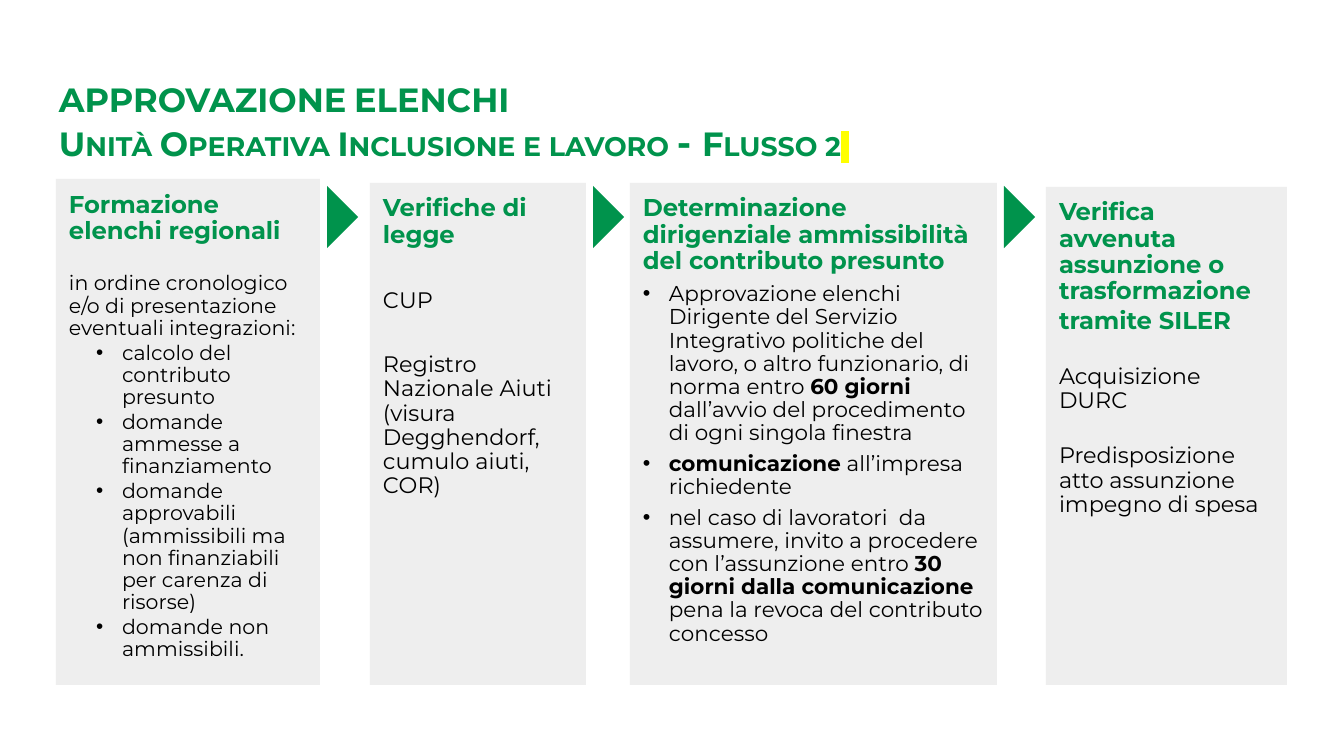
import dataclasses

import lxml.etree
import pptx
import pptx.dml.color
import pptx.enum.shapes
import pptx.enum.text
import pptx.oxml.ns
import pptx.util

EMU_PER_PX = 914400 / 134.4


@dataclasses.dataclass(frozen=True)
class Theme:
    font: str = "Montserrat"
    green: str = "00934C"
    panel: str = "EEEEEE"
    black: str = "000000"
    yellow: str = "FFFF00"
    title_size: float = 18
    dash_size: float = 20
    heading_size: float = 13
    line_spacing: float = 0.9


THEME = Theme()


def px(length):
    return round(length * EMU_PER_PX)


def rgb(value):
    return pptx.dml.color.RGBColor.from_string(value)


def apply(target, values):
    for name, value in values.items():
        setattr(target, name, value)


def sub(parent, tag, **attributes):
    return lxml.etree.SubElement(parent, pptx.oxml.ns.qn(tag), attributes)


def prepare_frame(shape):
    apply(shape.text_frame, {
        "word_wrap": True,
        "auto_size": pptx.enum.text.MSO_AUTO_SIZE.NONE,
        "vertical_anchor": pptx.enum.text.MSO_ANCHOR.TOP,
        "margin_left": px(13), "margin_right": px(13),
        "margin_top": px(13), "margin_bottom": px(13),
    })
    return shape.text_frame


def add_run(paragraph, text, size, color, bold):
    run = paragraph.add_run()
    run.text = text
    apply(run.font, {"name": THEME.font, "size": pptx.util.Pt(size), "bold": bold})
    run.font.color.rgb = rgb(color)
    return run


def add_flat_shape(slide, kind, box, color):
    shape = slide.shapes.add_shape(kind, *map(px, box))
    shape.shadow.inherit = False
    shape.fill.solid()
    shape.fill.fore_color.rgb = rgb(color)
    shape.line.fill.background()
    return shape


def add_title(slide, box):
    frame = prepare_frame(slide.shapes.add_textbox(*map(px, box)))
    title = frame.paragraphs[0]

    def title_run(text, size=THEME.title_size, small_caps=True):
        run = add_run(title, text, size, THEME.green, True)
        if small_caps:
            run.font._element.set("cap", "small")
        return run

    title_run("APPROVAZIONE ELENCHI ")
    title.add_line_break()
    title_run("Unità Operativa Inclusione e lavoro ")
    title_run("- ", THEME.dash_size, False)
    title_run("Flusso 2")
    marked = title_run(" ").font._element
    highlight = lxml.etree.Element(pptx.oxml.ns.qn("a:highlight"))
    sub(highlight, "a:srgbClr", val=THEME.yellow)
    marked.find(pptx.oxml.ns.qn("a:solidFill")).addnext(highlight)


def add_bullet(paragraph, margin):
    properties = paragraph._p.get_or_add_pPr()
    properties.set("marL", str(px(margin)))
    properties.set("indent", str(-px(26)))
    sub(sub(properties, "a:buClr"), "a:srgbClr", val=THEME.black)
    sub(properties, "a:buFont", typeface="Arial")
    sub(properties, "a:buChar", char="•")


def add_step(slide, box, step):
    rectangle = pptx.enum.shapes.MSO_SHAPE.RECTANGLE
    frame = prepare_frame(add_flat_shape(slide, rectangle, box, THEME.panel))
    for index, (kind, gap, runs) in enumerate(step["paragraphs"]):
        paragraph = frame.paragraphs[0] if index == 0 else frame.add_paragraph()
        if kind == "bullet":
            add_bullet(paragraph, step["bullet_margin"])
        apply(paragraph, {
            "alignment": pptx.enum.text.PP_ALIGN.LEFT,
            "line_spacing": THEME.line_spacing,
            "space_before": pptx.util.Pt(gap),
        })
        for text, bold in runs:
            if kind == "heading":
                add_run(paragraph, text, THEME.heading_size, THEME.green, True)
            else:
                add_run(paragraph, text, step["size"], THEME.black, bold)


def add_arrow(slide, box):
    triangle = pptx.enum.shapes.MSO_SHAPE.RIGHT_TRIANGLE
    add_flat_shape(slide, triangle, box, THEME.green).rotation = 225


def plain(kind, gap, text):
    return kind, gap, [(text, False)]


STEPS = [
    {"left": 56, "top": 179, "width": 264, "size": 11, "bullet_margin": 53, "paragraphs": [
        plain("heading", 0, "Formazione elenchi regionali"),
        plain("body", 15.3, "in ordine cronologico e/o di presentazione eventuali integrazioni:"),
        plain("bullet", 1.5, "calcolo del contributo presunto"),
        plain("bullet", 1.5, "domande ammesse a finanziamento"),
        plain("bullet", 1.5, "domande approvabili (ammissibili ma non finanziabili per carenza di risorse)"),
        plain("bullet", 1.5, "domande non ammissibili."),
    ]},
    {"left": 370, "top": 183, "width": 216, "size": 12, "paragraphs": [
        plain("heading", 0, "Verifiche di legge"),
        plain("body", 22, "CUP"),
        plain("body", 21.3, "Registro Nazionale Aiuti (visura Degghendorf, cumulo aiuti, COR)"),
    ]},
    {"left": 630, "top": 183, "width": 367, "size": 11.5, "bullet_margin": 26, "paragraphs": [
        plain("heading", 0, "Determinazione dirigenziale ammissibilità del contributo presunto"),
        ("bullet", 4.5, [
            ("Approvazione elenchi Dirigente del Servizio Integrativo politiche del lavoro, "
             "o altro funzionario, di norma entro ", False),
            ("60 giorni ", True),
            ("dall’avvio del procedimento di ogni singola finestra", False),
        ]),
        ("bullet", 4, [("comunicazione", True), (" all’impresa richiedente", False)]),
        ("bullet", 4, [
            ("nel caso di lavoratori  da assumere, invito a procedere con l’assunzione entro ", False),
            ("30 giorni dalla comunicazione ", True),
            ("pena la revoca del contributo concesso", False),
        ]),
    ]},
    {"left": 1046, "top": 187, "width": 241, "size": 12, "paragraphs": [
        plain("heading", 0, "Verifica avvenuta assunzione o trasformazione"),
        plain("heading", 1.8, "tramite SILER"),
        plain("body", 16.5, "Acquisizione DURC"),
        plain("body", 16.5, "Predisposizione atto assunzione impegno di spesa"),
    ]},
]


def add_flow(slide, box):
    left, top, _, height = box
    for step in STEPS:
        step_box = (step["left"], step["top"], step["width"], top + height - step["top"])
        add_step(slide, step_box, step)
    for step in STEPS[:-1]:
        add_arrow(slide, (step["left"] + step["width"] - 15, top + 16, 44, 44))


def main():
    presentation = pptx.Presentation()
    apply(presentation, {"slide_width": px(1344), "slide_height": px(756)})
    slide = presentation.slides.add_slide(presentation.slide_layouts[6])
    add_title(slide, (46, 66, 1253, 85))
    add_flow(slide, (56, 179, 1231, 506))
    presentation.save("out.pptx")


if __name__ == "__main__":
    main()
